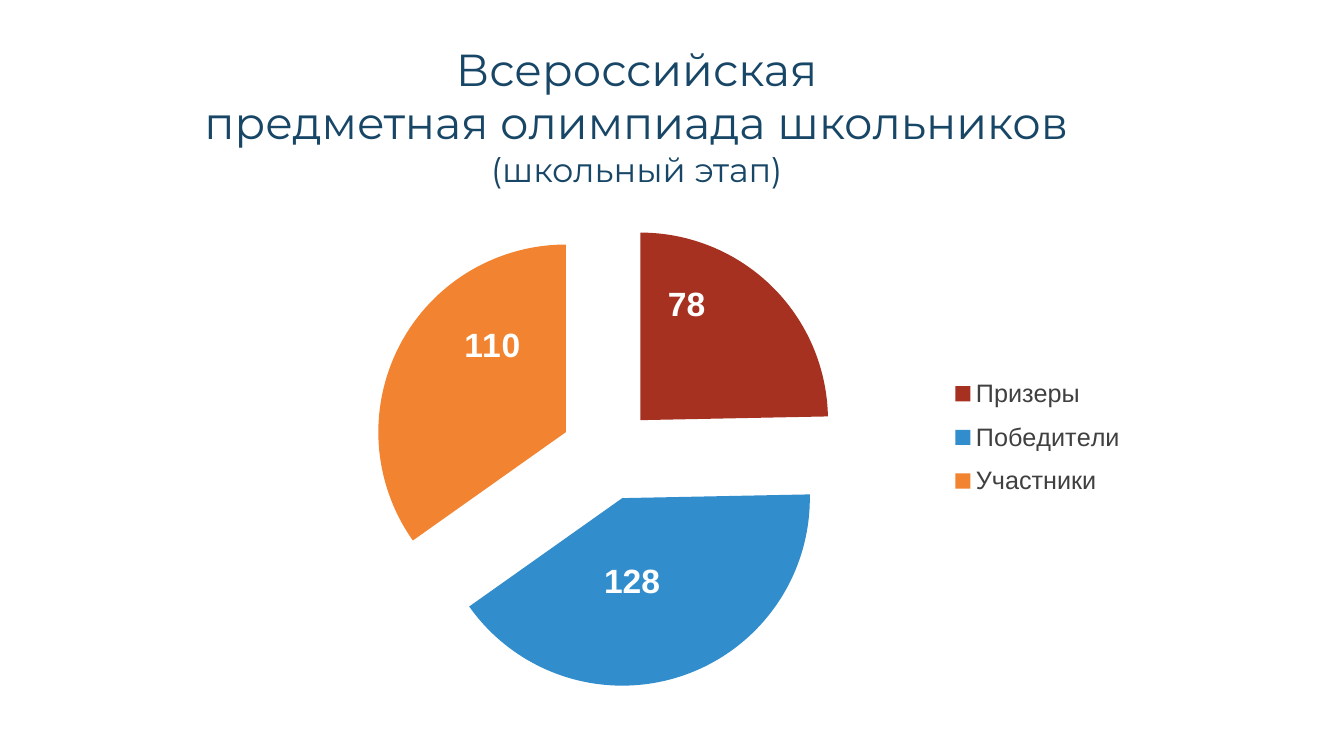
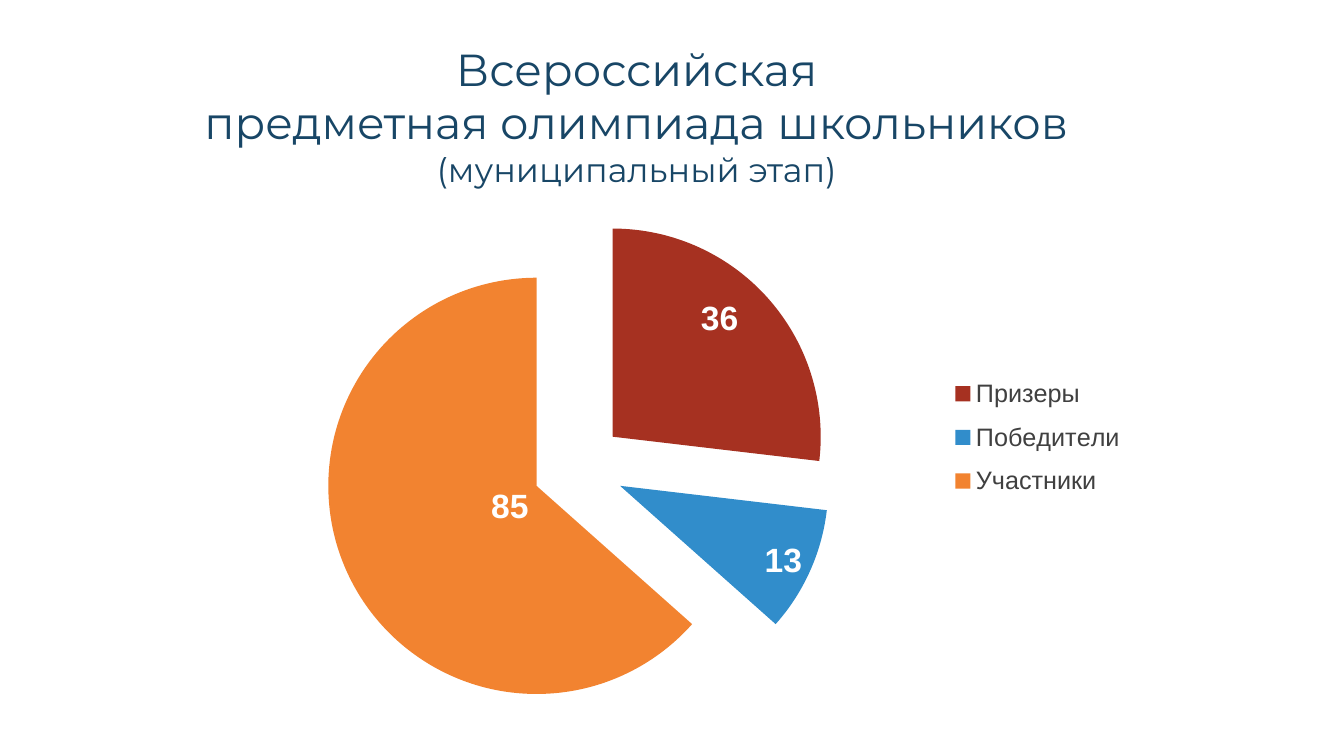
"""Build two slides of olympiad results, each a title above an exploded pie."""
from dataclasses import dataclass

from lxml import etree
from pptx import Presentation
from pptx.chart.data import CategoryChartData
from pptx.dml.color import RGBColor
from pptx.enum.chart import XL_CHART_TYPE, XL_LABEL_POSITION, XL_LEGEND_POSITION
from pptx.enum.text import PP_ALIGN
from pptx.oxml.ns import qn
from pptx.util import Inches, Pt

PIE = XL_CHART_TYPE.PIE
LABEL_CENTER = XL_LABEL_POSITION.CENTER
LEGEND_RIGHT = XL_LEGEND_POSITION.RIGHT
CENTER = PP_ALIGN.CENTER


@dataclass(frozen=True)
class Theme:
    title_font: str = "Montserrat"
    chart_font: str = "Arial"
    title: str = "184666"
    legend: str = "404040"
    label: str = "FFFFFF"
    slices: tuple = ("A63121", "318DCB", "F28330")
    title_size: int = 32
    stage_size: int = 24
    label_size: int = 24
    legend_size: int = 18


THEME = Theme()
TITLE_LINES = ("Всероссийская", "предметная олимпиада школьников")
GROUPS = ("Призеры", "Победители", "Участники")
STAGES = [
    {
        "stage": "(школьный этап)",
        "counts": (78, 128, 110),
        "explosion": 25,
        "pie_area": {"x": 0.19, "y": 0.04, "w": 0.48, "h": 0.87},
        "label_shifts": ((-0.02, -0.09), (-0.02, -0.01), (0.01, -0.08)),
    },
    {
        "stage": "(муниципальный этап)",
        "counts": (36, 13, 85),
        "explosion": 22,
        "pie_area": {"x": 0.14, "y": 0.03, "w": 0.52, "h": 0.94},
        "label_shifts": ((0.03, -0.09), (0.07, 0.06), (0.07, -0.04)),
    },
]
TITLE_BOX = [Inches(n) for n in (1.08, 0.36, 10.47, 1.58)]
CHART_BOX = [Inches(n) for n in (1.86, 1.95, 9.69, 5.37)]
LEGEND_AREA = {"x": 0.78, "y": 0.31, "w": 0.18, "h": 0.27}


def style_font(font, size, color, name, bold=False):
    font.size, font.name, font.bold = Pt(size), name, bold
    font.color.rgb = RGBColor.from_string(color)


def add_text(paragraph, text, *, size, color=THEME.title, name=THEME.title_font):
    run = paragraph.add_run()
    run.text = text
    style_font(run.font, size, color, name)


def add_title(slide, stage):
    frame = slide.shapes.add_textbox(*TITLE_BOX).text_frame
    frame.word_wrap = True
    event, subject = frame.paragraphs[0], frame.add_paragraph()
    for paragraph, line in zip((event, subject), TITLE_LINES):
        paragraph.alignment = CENTER
        add_text(paragraph, line, size=THEME.title_size)
    subject.add_line_break()
    add_text(subject, stage, size=THEME.stage_size)


def chart_layout(settings):
    layout = etree.Element(qn("c:layout"))
    manual = etree.SubElement(layout, qn("c:manualLayout"))
    for tag, value in settings.items():
        etree.SubElement(manual, qn(f"c:{tag}")).set("val", str(value))
    return layout


def place_parts(chart, pie_area, label_shifts):
    fixed = {"xMode": "edge", "yMode": "edge"}
    plot_area = chart.element.find(".//" + qn("c:plotArea"))
    for automatic in plot_area.findall(qn("c:layout")):
        plot_area.remove(automatic)
    plot_area.insert(0, chart_layout({"layoutTarget": "inner"} | fixed | pie_area))
    legend = chart.element.find(".//" + qn("c:legend"))
    for automatic in legend.findall(qn("c:layout")):
        legend.remove(automatic)
    legend.find(qn("c:legendPos")).addnext(chart_layout(fixed | LEGEND_AREA))
    labels = chart.element.iter(qn("c:dLbl"))
    for label, (x, y) in zip(labels, label_shifts):
        label.find(qn("c:idx")).addnext(chart_layout({"x": x, "y": y}))


def add_pie(slide, counts, explosion, pie_area, label_shifts):
    data = CategoryChartData()
    data.categories = GROUPS
    data.add_series("Series 1", counts)
    chart = slide.shapes.add_chart(PIE, *CHART_BOX, data).chart
    chart.has_title = False
    chart.has_legend = True
    chart.legend.position = LEGEND_RIGHT
    chart.legend.include_in_layout = False
    style_font(chart.font, THEME.legend_size, THEME.legend, THEME.chart_font)
    plot = chart.plots[0]
    plot.vary_by_categories = True
    series_name = chart.element.find(".//" + qn("c:ser")).find(qn("c:tx"))
    burst = etree.Element(qn("c:explosion"))
    burst.set("val", str(explosion))
    series_name.addnext(burst)
    for index, color in enumerate(THEME.slices):
        point = plot.series[0].points[index]
        point.format.fill.solid()
        point.format.fill.fore_color.rgb = RGBColor.from_string(color)
        point.format.line.fill.background()
        point.data_label.position = LABEL_CENTER
        style_font(point.data_label.font, THEME.label_size, THEME.label,
                   THEME.chart_font, bold=True)
    place_parts(chart, pie_area, label_shifts)


def main():
    deck = Presentation()
    deck.slide_width, deck.slide_height = Inches(13.33), Inches(7.5)
    for results in STAGES:
        slide = deck.slides.add_slide(deck.slide_layouts[6])
        add_title(slide, results["stage"])
        add_pie(slide, results["counts"], results["explosion"],
                results["pie_area"], results["label_shifts"])
    deck.save("out.pptx")


if __name__ == "__main__":
    main()
